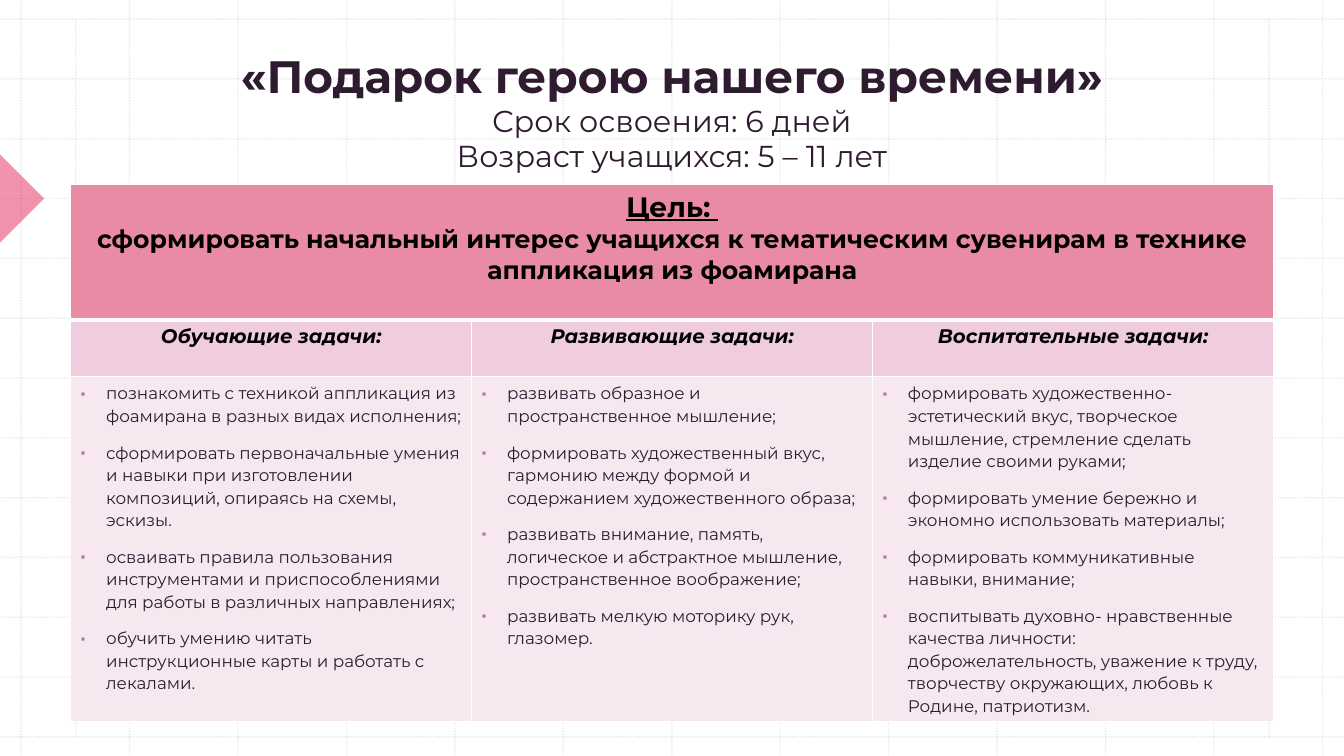
import pptx
import pptx.util
import pptx.dml.color
import pptx.enum.dml
import pptx.enum.shapes
import pptx.enum.text
import pptx.oxml
import pptx.oxml.ns

Pt = pptx.util.Pt
RGB = pptx.dml.color.RGBColor.from_string
CENTER = pptx.enum.text.PP_ALIGN.CENTER
NS = pptx.oxml.ns.nsdecls("a")
HUES = {
    "grid": "BCBCBC", "wedge": "E7295E", "dark": "2E1B30", "black": "000000",
    "white": "FFFFFF", "goal": "EA8BA5", "head": "EFCCDE", "body": "F7E8EF",
    "mark": "AB74B1",
}
GOAL = [
    ("Цель: ", 20),
    ("сформировать начальный интерес учащихся к тематическим сувенирам в технике", 18),
    ("аппликация из фоамирана", 18),
]
TASKS = {
    "Обучающие задачи:": [
        "познакомить с техникой аппликация из фоамирана в разных видах исполнения;",
        "сформировать первоначальные умения и навыки при изготовлении композиций, опираясь на схемы, эскизы.",
        "осваивать правила пользования инструментами и приспособлениями для работы в различных направлениях;",
        "обучить умению читать инструкционные карты и работать с лекалами.",
    ],
    "Развивающие задачи:": [
        "развивать образное и пространственное мышление;",
        "формировать художественный вкус, гармонию между формой и содержанием художественного образа;",
        "развивать внимание, память, логическое и абстрактное мышление, пространственное воображение;",
        "развивать мелкую моторику рук, глазомер.",
    ],
    "Воспитательные задачи:": [
        "формировать художественно- эстетический вкус, творческое мышление, стремление сделать изделие своими руками;",
        "формировать умение бережно и экономно использовать материалы;",
        "формировать коммуникативные навыки, внимание;",
        "воспитывать духовно- нравственные качества личности: доброжелательность, уважение к труду, творчеству окружающих, любовь к Родине, патриотизм.",
    ],
}


def style(para, size, hue, bold):
    for run in para.runs:
        font = run.font
        font.name = "Montserrat"
        font.size = Pt(size)
        font.bold = bold
        font.color.rgb = RGB(HUES[hue])


def fade(fill, share):
    color = fill.find(".//" + pptx.oxml.ns.qn("a:srgbClr"))
    color.append(pptx.oxml.parse_xml(f'<a:alpha {NS} val="{share * 1000}"/>'))


deck = pptx.Presentation()
deck.slide_width = Pt(960)
deck.slide_height = Pt(540)
slide = deck.slides.add_slide(deck.slide_layouts[5])
shapes = slide.shapes

grid = [(15.12 + 77.46 * i, 0, 15.12 + 77.46 * i, 540) for i in range(13)]
grid += [(0, 13.68 + 42.72 * i, 960, 13.68 + 42.72 * i) for i in range(13)]
grid += [(x, 13.68, x, 526.32) for x in (54, 906.5)]
for ends in grid:
    line = shapes.add_connector(
        pptx.enum.shapes.MSO_CONNECTOR.STRAIGHT, *[Pt(end) for end in ends])
    line.line.color.rgb = RGB(HUES["grid"])
    line.line.width = Pt(1)
    line.line.dash_style = pptx.enum.dml.MSO_LINE.ROUND_DOT
    props = line.element.spPr
    fade(props, 30)
    props.append(pptx.oxml.parse_xml(f"<a:effectLst {NS}/>"))

wedge = shapes.add_shape(
    pptx.enum.shapes.MSO_SHAPE.RIGHT_TRIANGLE, Pt(-22.3), Pt(119.5), Pt(44.6), Pt(44.6))
wedge.rotation = 225
wedge.shadow.inherit = False
wedge.fill.solid()
wedge.fill.fore_color.rgb = RGB(HUES["wedge"])
wedge.line.fill.background()
fade(wedge.element.spPr, 50)

table = shapes.add_table(3, 3, Pt(50.6), Pt(132), Pt(859.2), Pt(383)).table
table.first_row = False
table.horz_banding = False
for col in table.columns:
    col.width = Pt(286.4)
for row, high in zip(table.rows, (96.4, 40.6, 246)):
    row.height = Pt(high)
for row, hue in enumerate(("goal", "head", "body")):
    for col in range(3):
        cell = table.cell(row, col)
        props = cell._tc.get_or_add_tcPr()
        for side in "LRTB":
            thick = 3 if (row, side) in ((0, "B"), (1, "T")) else 1
            props.append(pptx.oxml.parse_xml(
                f'<a:ln{side} {NS} w="{thick * 12700}"><a:solidFill>'
                f'<a:srgbClr val="{HUES["white"]}"/></a:solidFill></a:ln{side}>'))
        cell.fill.solid()
        cell.fill.fore_color.rgb = RGB(HUES[hue])
table.cell(0, 0).merge(table.cell(0, 2))

goal = table.cell(0, 0).text_frame
goal.text = "\n".join(text for text, size in GOAL)
for para, (text, size) in zip(goal.paragraphs, GOAL):
    para.alignment = CENTER
    style(para, size, "black", True)
goal.paragraphs[0].runs[0].font.underline = True

for col, (head, items) in enumerate(TASKS.items()):
    para = table.cell(1, col).text_frame.paragraphs[0]
    para.text = head
    para.alignment = CENTER
    style(para, 14, "black", True)
    para.runs[0].font.italic = True
    body = table.cell(2, col).text_frame
    body.text = "\n".join(items)
    for para in body.paragraphs:
        para.line_spacing = 1.1
        para.space_before = Pt(10)
        style(para, 12, "dark", False)
        props = para._p.get_or_add_pPr()
        props.set("marL", str(Pt(18)))
        props.set("indent", str(Pt(-18)))
        for part in (f'<a:buClr {NS}><a:srgbClr val="{HUES["mark"]}"/></a:buClr>',
                     f'<a:buSzPct {NS} val="75000"/>',
                     f'<a:buFont {NS} typeface="Arial"/>',
                     f'<a:buChar {NS} char="▪"/>'):
            props.append(pptx.oxml.parse_xml(part))

title = shapes.title
title.left, title.top, title.width, title.height = Pt(73.4), Pt(33), Pt(813), Pt(92)
frame = title.text_frame
frame.auto_size = pptx.enum.text.MSO_AUTO_SIZE.NONE
frame.word_wrap = True
frame.vertical_anchor = pptx.enum.text.MSO_ANCHOR.BOTTOM
frame.margin_top = frame.margin_bottom = 0
frame.text = "«Подарок герою нашего времени»\nСрок освоения: 6 дней\nВозраст учащихся: 5 – 11 лет"
for para, size in zip(frame.paragraphs, (32.4, 21.6, 21.6)):
    para.alignment = CENTER
    para.line_spacing = 0.98
    para.space_before = Pt(0)
    style(para, size, "dark", size > 30)
title.element.getparent().append(title.element)

deck.save("out.pptx")
